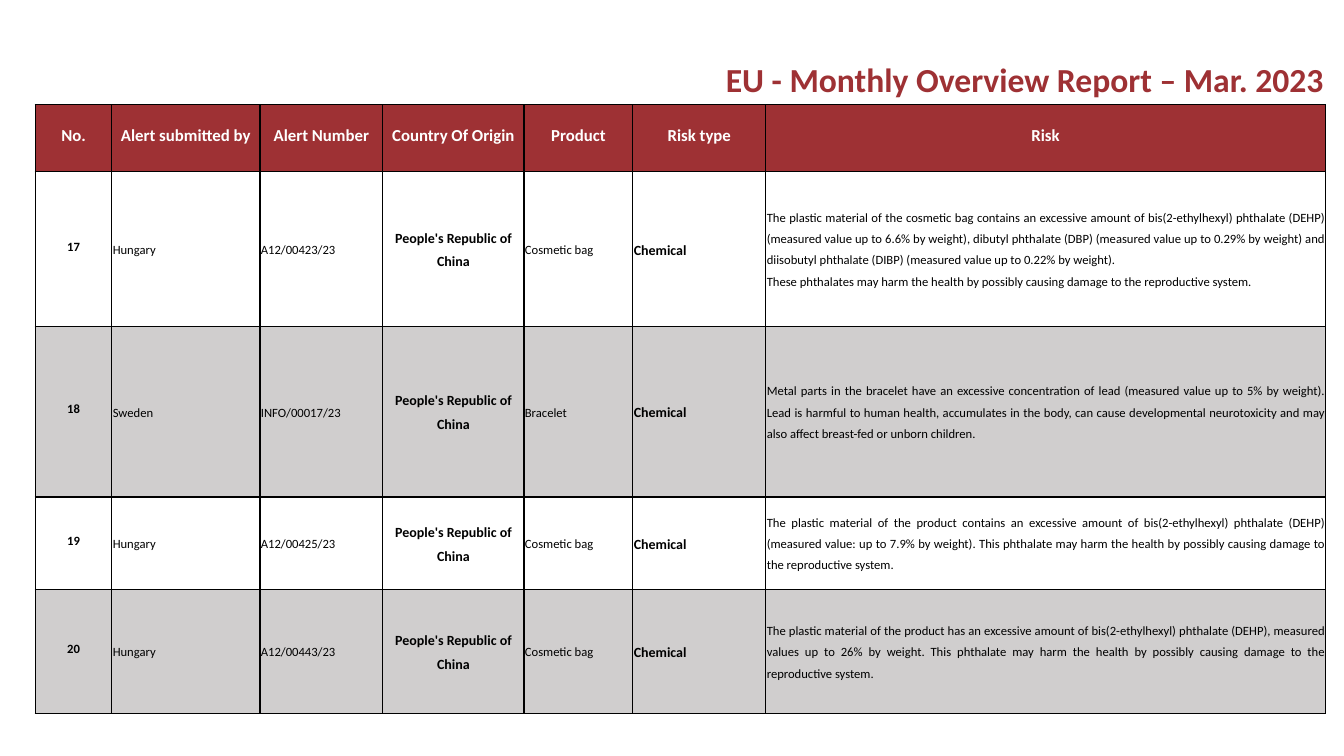
import pptx
import pptx.dml.color
import pptx.enum.text
import pptx.oxml.ns
import pptx.util
from lxml import etree

Pt = pptx.util.Pt
ALIGN = pptx.enum.text.PP_ALIGN
ANCHOR = pptx.enum.text.MSO_ANCHOR
AUTO = pptx.enum.text.MSO_AUTO_SIZE
qn = pptx.oxml.ns.qn

RED, GREY, BLACK, WHITE = "9E3134", "D0CECE", "000000", "FFFFFF"


def rgb(value):
    return pptx.dml.color.RGBColor.from_string(value)


class Deck:
    font = "Calibri"

    def __init__(self, width, height):
        self.prs = pptx.Presentation()
        self.prs.slide_width, self.prs.slide_height = Pt(width), Pt(height)

    def add_slide(self):
        self.s = self.prs.slides.add_slide(self.prs.slide_layouts[5])

    def run(self, p, text, size, color, bold):
        r = p.add_run()
        r.text = text
        r.font.name, r.font.size, r.font.bold = self.font, Pt(size), bold
        r.font.color.rgb = rgb(color)

    def title(self, text, left, top, width, height):
        sp = self.s.shapes.title
        sp.left, sp.top, sp.width, sp.height = map(Pt, (left, top, width, height))
        tf = sp.text_frame
        tf.word_wrap = False
        tf.auto_size = AUTO.SHAPE_TO_FIT_TEXT
        tf.vertical_anchor = ANCHOR.TOP
        p = tf.paragraphs[0]
        p.alignment = ALIGN.LEFT
        self.run(p, text, 24, RED, True)

    def table(self, left, top, widths, heights):
        frame = self.s.shapes.add_table(len(heights), len(widths), Pt(left), Pt(top),
                                        Pt(sum(widths)), Pt(sum(heights)))
        tbl = frame.table
        tbl.first_row = tbl.horz_banding = False
        for column, width in zip(tbl.columns, widths):
            column.width = Pt(width)
        for row, height in zip(tbl.rows, heights):
            row.height = Pt(height)
        return tbl

    def borders(self, cell):
        tcPr = cell._tc.get_or_add_tcPr()
        for side in ("lnL", "lnR", "lnT", "lnB"):
            ln = etree.SubElement(tcPr, qn("a:" + side), w=str(Pt(1)))
            fill = etree.SubElement(ln, qn("a:solidFill"))
            etree.SubElement(fill, qn("a:srgbClr"), val=BLACK)

    def cell(self, cell, text, fill, size, color, bold, align, spacing=None):
        self.borders(cell)
        if fill:
            cell.fill.solid()
            cell.fill.fore_color.rgb = rgb(fill)
        else:
            cell.fill.background()
        cell.vertical_anchor = ANCHOR.MIDDLE
        cell.margin_left = cell.margin_right = cell.margin_top = Pt(0.7)
        cell.margin_bottom = Pt(3.6)
        tf = cell.text_frame
        for i, line in enumerate(text.split("\n")):
            p = tf.add_paragraph() if i else tf.paragraphs[0]
            p.alignment = align
            if spacing:
                p.line_spacing = spacing
            self.run(p, line, size, color, bold)


HEADERS = ["No.", "Alert submitted by", "Alert Number", "Country Of Origin",
           "Product", "Risk type", "Risk"]
ORIGIN, RISK_TYPE = "People's Republic of China", "Chemical"

# Number, submitting country, alert number, product, risk
ALERTS = [
    ("17", "Hungary", "A12/00423/23", "Cosmetic bag",
     "The plastic material of the cosmetic bag contains an excessive amount of "
     "bis(2-ethylhexyl) phthalate (DEHP) (measured value up to 6.6% by weight), dibutyl "
     "phthalate (DBP) (measured value up to 0.29% by weight) and diisobutyl phthalate "
     "(DIBP) (measured value up to 0.22% by weight).\n"
     "These phthalates may harm the health by possibly causing damage to the "
     "reproductive system."),
    ("18", "Sweden", "INFO/00017/23", "Bracelet",
     "Metal parts in the bracelet have an excessive concentration of lead (measured value "
     "up to 5% by weight). Lead is harmful to human health, accumulates in the body, can "
     "cause developmental neurotoxicity and may also affect breast-fed or unborn children."),
    ("19", "Hungary", "A12/00425/23", "Cosmetic bag",
     "The plastic material of the product contains an excessive amount of "
     "bis(2-ethylhexyl) phthalate (DEHP) (measured value: up to 7.9% by weight). This "
     "phthalate may harm the health by possibly causing damage to the reproductive system."),
    ("20", "Hungary", "A12/00443/23", "Cosmetic bag",
     "The plastic material of the product has an excessive amount of bis(2-ethylhexyl) "
     "phthalate (DEHP), measured values up to 26% by weight. This phthalate may harm the "
     "health by possibly causing damage to the reproductive system."),
]

# Size, bold, alignment and line spacing of each body column
PLAIN = (9, False, ALIGN.JUSTIFY, 1.4)
COLUMN_STYLES = [(9, True, ALIGN.CENTER, None), PLAIN, PLAIN,
                 (10, True, ALIGN.CENTER, 1.4), PLAIN,
                 (10, True, ALIGN.JUSTIFY, 1.4), PLAIN]


def main():
    deck = Deck(960, 540)
    deck.add_slide()

    # Title
    deck.title("EU - Monthly Overview Report – Mar. 2023", 511.2, 38.2, 443.5, 36)

    # Table header
    tbl = deck.table(25.2, 74.9, [54.7, 105.8, 87.8, 100.8, 77.8, 95, 399.6],
                     [47.5, 110.9, 121.7, 66.2, 88.6])
    for c, header in enumerate(HEADERS):
        deck.cell(tbl.cell(0, c), header, RED, 12, WHITE, True, ALIGN.CENTER)

    # Alert rows, every second one shaded
    for n, (number, country, alert, product, risk) in enumerate(ALERTS, 1):
        fill = None if n % 2 else GREY
        values = [number, country, alert, ORIGIN, product, RISK_TYPE, risk]
        for c, (text, style) in enumerate(zip(values, COLUMN_STYLES)):
            size, bold, align, spacing = style
            deck.cell(tbl.cell(n, c), text, fill, size, BLACK, bold, align, spacing)

    deck.prs.save("out.pptx")


if __name__ == "__main__":
    main()
